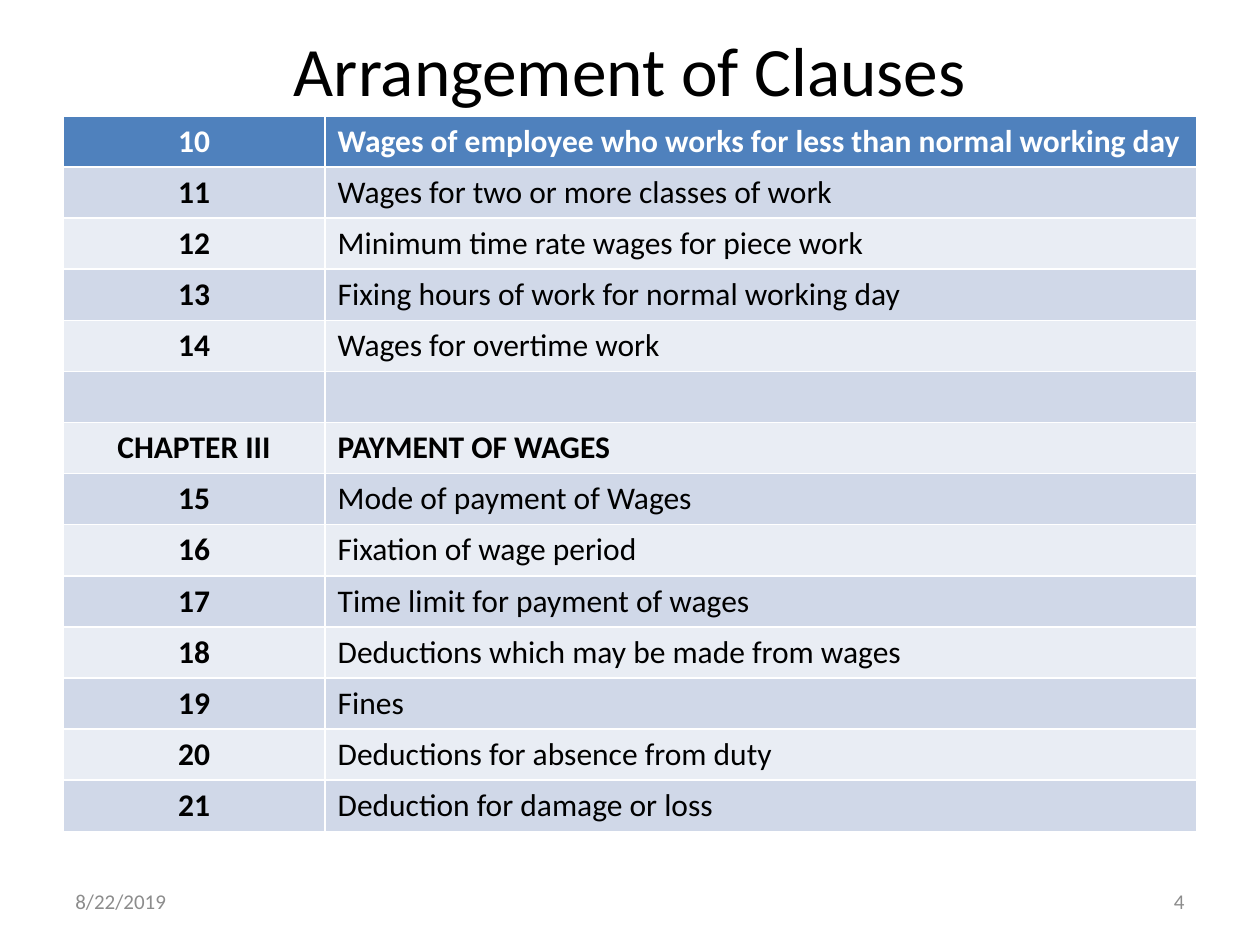
from pptx import Presentation
from pptx.dml.color import RGBColor
from pptx.enum import text
from pptx.util import Inches, Pt

TITLE = "Arrangement of Clauses"
CLAUSES = [
    ("10", "Wages of employee who works for less than normal working day"),
    ("11", "Wages for two or more classes of work"),
    ("12", "Minimum time rate wages for piece work"),
    ("13", "Fixing hours of work for normal working day"),
    ("14", "Wages for overtime work"),
    ("", ""),
    ("CHAPTER III", "PAYMENT OF WAGES"),
    ("15", "Mode of payment of Wages"),
    ("16", "Fixation of wage period"),
    ("17", "Time limit for payment of wages"),
    ("18", "Deductions which may be made from wages"),
    ("19", "Fines"),
    ("20", "Deductions for absence from duty"),
    ("21", "Deduction for damage or loss"),
]
COLUMN_WIDTHS = (2.08, 6.92)

FONT = "Calibri"
BLACK = RGBColor(0x00, 0x00, 0x00)
WHITE = RGBColor(0xFF, 0xFF, 0xFF)
GRAY = RGBColor(0x8C, 0x8C, 0x8C)
HEADER = RGBColor(0x4F, 0x81, 0xBD)
BANDS = (RGBColor(0xE9, 0xED, 0xF4), RGBColor(0xD0, 0xD8, 0xE8))

LEFT, CENTER, RIGHT = text.PP_ALIGN.LEFT, text.PP_ALIGN.CENTER, text.PP_ALIGN.RIGHT


def write(tf, words, size, color, align, bold=False):
    p = tf.paragraphs[0]
    p.text = words
    p.alignment = align
    p.font.name = FONT
    p.font.size = Pt(size)
    p.font.bold = bold
    p.font.color.rgb = color


def add_label(s, box, words, size, color, align):
    tf = s.shapes.add_textbox(*map(Inches, box)).text_frame
    tf.word_wrap = True
    tf.vertical_anchor = text.MSO_ANCHOR.MIDDLE
    write(tf, words, size, color, align)


def add_clauses(s):
    table = s.shapes.add_table(
        len(CLAUSES), len(COLUMN_WIDTHS),
        Inches(0.5), Inches(0.92), Inches(9), Inches(5.68)).table
    for column, width in zip(table.columns, COLUMN_WIDTHS):
        column.width = Inches(width)
    for i, (number, heading) in enumerate(CLAUSES):
        is_header = i == 0
        is_chapter = number.startswith("CHAPTER")
        color = WHITE if is_header else BLACK
        for j, words in enumerate((number, heading)):
            cell = table.cell(i, j)
            cell.fill.solid()
            cell.fill.fore_color.rgb = HEADER if is_header else BANDS[i % 2]
            bold = j == 0 or is_header or is_chapter
            write(cell.text_frame, words, 18, color, LEFT if j else CENTER, bold)


prs = Presentation()
prs.slide_width, prs.slide_height = Inches(10), Inches(7.5)
s = prs.slides.add_slide(prs.slide_layouts[6])
add_label(s, (0.5, 0.17, 9, 0.75), TITLE, 39.6, BLACK, CENTER)
add_clauses(s)
add_label(s, (0.5, 6.95, 2.33, 0.4), "8/22/2019", 12, GRAY, LEFT)
add_label(s, (7.17, 6.95, 2.33, 0.4), "4", 12, GRAY, RIGHT)
prs.save("out.pptx")
